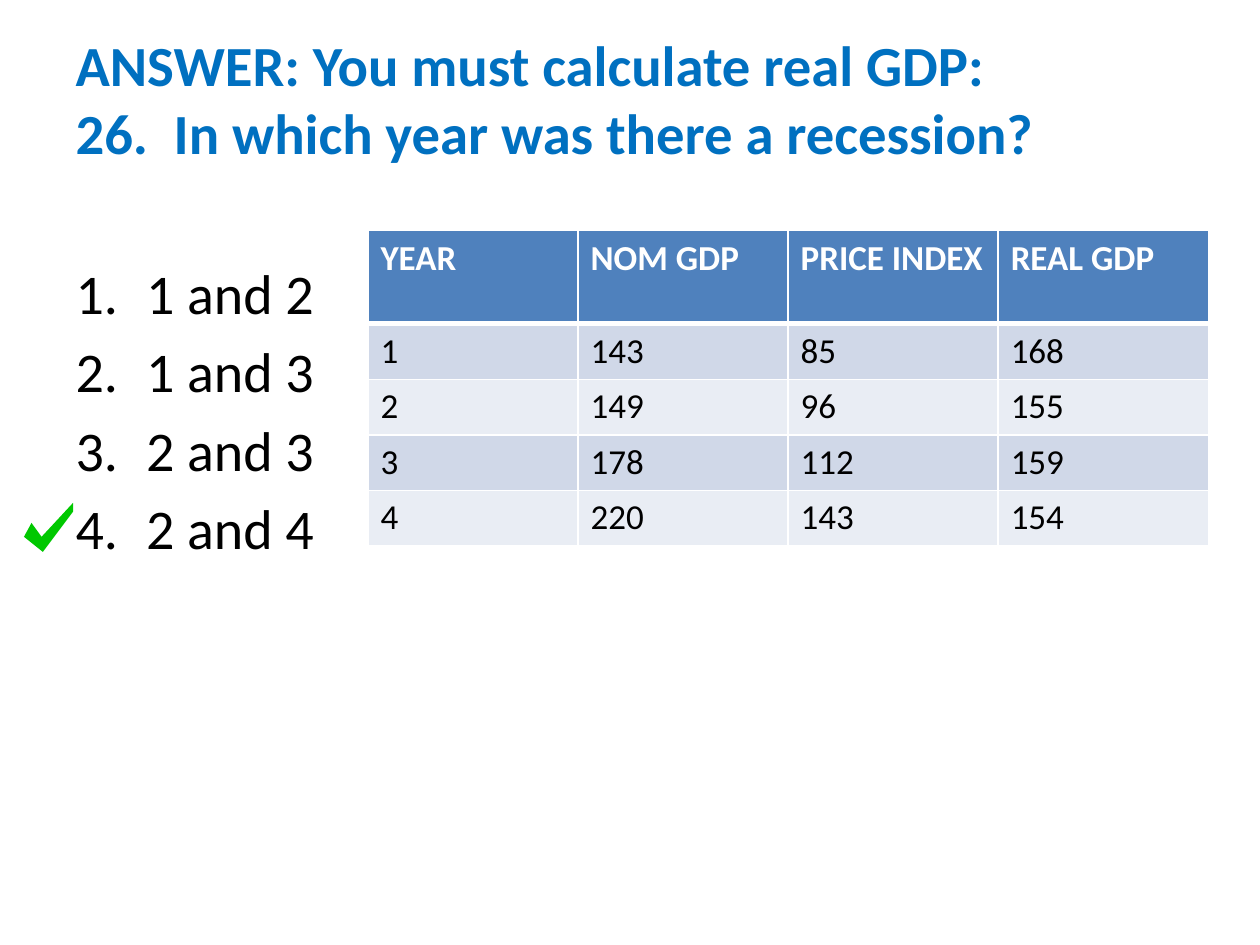
"""Build a quiz answer slide with a real GDP table and a marked choice."""
from lxml import etree
from pptx import Presentation
from pptx.dml.color import RGBColor
from pptx.enum.text import MSO_ANCHOR, MSO_AUTO_SIZE, PP_ALIGN
from pptx.oxml.ns import qn
from pptx.util import Inches, Pt

TITLE_BLUE = RGBColor(0x00, 0x70, 0xC0)
HEADER_BLUE = RGBColor(0x4F, 0x81, 0xBD)
BAND_DARK = RGBColor(0xD0, 0xD8, 0xE8)
BAND_LIGHT = RGBColor(0xE9, 0xED, 0xF4)
CHECK_GREEN = RGBColor(0x00, 0xC8, 0x00)
WHITE = RGBColor(0xFF, 0xFF, 0xFF)
BLACK = RGBColor(0x00, 0x00, 0x00)


def format_runs(paragraph, size, color, bold=False):
    for run in paragraph.runs:
        run.font.name = "Calibri"
        run.font.size = Pt(size)
        run.font.bold = bold
        run.font.color.rgb = color


def add_border(cell, side, width):
    properties = cell._tc.get_or_add_tcPr()
    line = etree.SubElement(properties, qn(f"a:ln{side}"), w=str(Pt(width)))
    fill = etree.SubElement(line, qn("a:solidFill"))
    etree.SubElement(fill, qn("a:srgbClr"), val=str(WHITE))


presentation = Presentation()
presentation.slide_width = Inches(10)
presentation.slide_height = Inches(7.5)
slide = presentation.slides.add_slide(presentation.slide_layouts[1])

title = slide.shapes.title
title.left, title.top = Inches(0.5), Inches(0.3)
title.width, title.height = Inches(9.17), Inches(1.45)
title_frame = title.text_frame
title_frame.text = "ANSWER: You must calculate real GDP:\v26.  In which year was there a recession?"
title_frame.auto_size = MSO_AUTO_SIZE.NONE
title_frame.vertical_anchor = MSO_ANCHOR.MIDDLE
title_frame.margin_top = 0
title_frame.margin_bottom = Inches(0.5)
title_paragraph = title_frame.paragraphs[0]
title_paragraph.alignment = PP_ALIGN.LEFT
format_runs(title_paragraph, 32.4, TITLE_BLUE, bold=True)

choices = slide.placeholders[1]
choices.left, choices.top = Inches(0.5), Inches(2)
choices.width, choices.height = Inches(2.42), Inches(2.92)
choices.text_frame.text = "1 and 2\n1 and 3\n2 and 3\n2 and 4"
choices.text_frame.auto_size = MSO_AUTO_SIZE.NONE
for paragraph in choices.text_frame.paragraphs:
    properties = paragraph._p.get_or_add_pPr()
    properties.set("marL", str(Inches(0.56)))
    properties.set("indent", str(-Inches(0.56)))
    etree.SubElement(properties, qn("a:buFont"), typeface="+mj-lt")
    etree.SubElement(properties, qn("a:buAutoNum"), type="arabicPeriod")
    format_runs(paragraph, 32, BLACK)

rows = [
    ("YEAR", "NOM GDP", "PRICE INDEX", "REAL GDP"),
    ("1", "143", "85", "168"),
    ("2", "149", "96", "155"),
    ("3", "178", "112", "159"),
    ("4", "220", "143", "154"),
]
table = slide.shapes.add_table(
    len(rows), len(rows[0]), Inches(2.92), Inches(1.83), Inches(6.67), Inches(2.34)
).table
for row_index, values in enumerate(rows):
    is_header = row_index == 0
    table.rows[row_index].height = Inches(0.74 if is_header else 0.4)
    band = HEADER_BLUE if is_header else BAND_DARK if row_index % 2 else BAND_LIGHT
    border_widths = {"L": 1, "R": 1, "T": 3 if row_index == 1 else 1, "B": 3 if is_header else 1}
    for column_index, value in enumerate(values):
        cell = table.cell(row_index, column_index)
        cell.text_frame.text = value
        format_runs(cell.text_frame.paragraphs[0], 20, WHITE if is_header else BLACK, is_header)
        for side, width in border_widths.items():
            add_border(cell, side, width)
        cell.fill.solid()
        cell.fill.fore_color.rgb = band

check_points = [(25, 415), (19, 426), (34, 438), (58, 406), (58, 399), (33, 426)]
builder = slide.shapes.build_freeform(*check_points[0], scale=Inches(0.01))
builder.add_line_segments(check_points[1:], close=True)
check_mark = builder.convert_to_shape()
check_mark.shadow.inherit = False
check_mark.fill.solid()
check_mark.fill.fore_color.rgb = CHECK_GREEN
check_mark.line.fill.background()

presentation.save("out.pptx")
